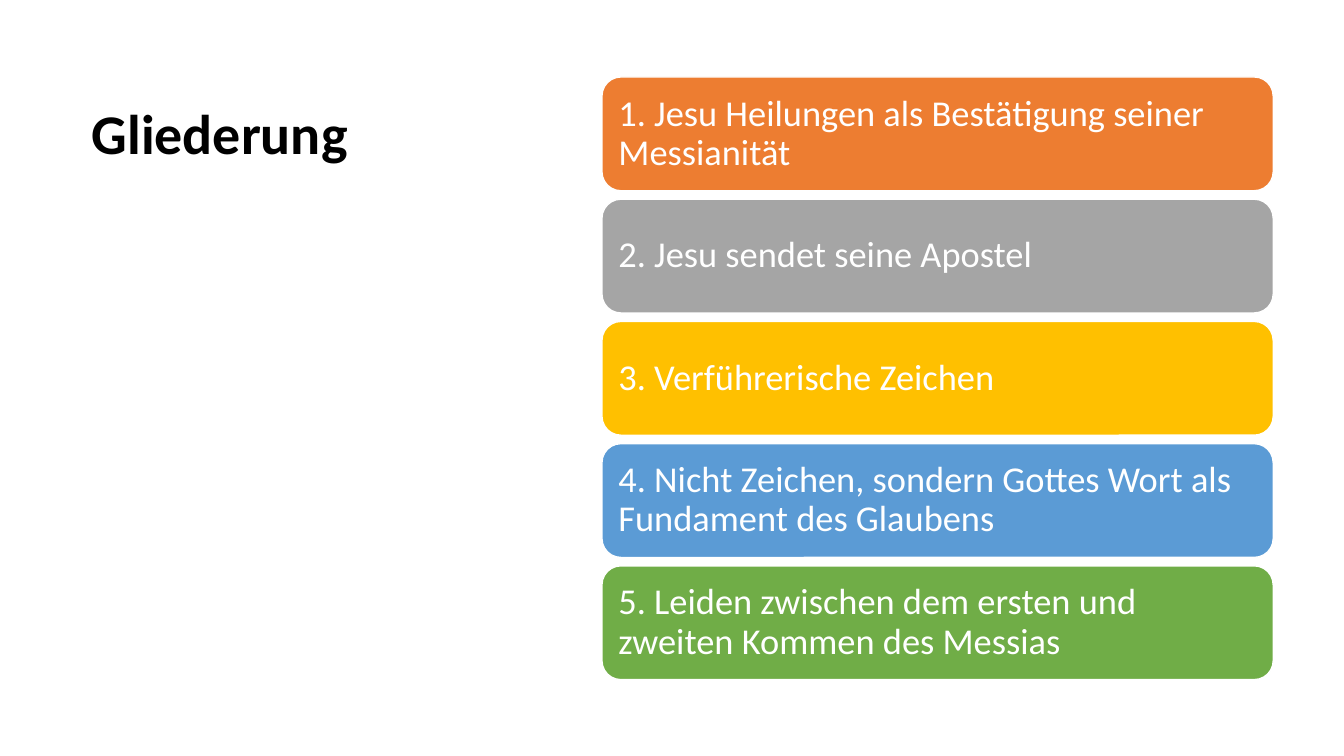
"""Build the outline slide: a title and five coloured section boxes."""
from dataclasses import dataclass

import pptx
import pptx.dml.color
import pptx.enum.shapes
import pptx.enum.text
import pptx.util

TITLE = "Gliederung"
SECTIONS = [
    ("1. Jesu Heilungen als Bestätigung seiner Messianität", "ED7D31"),
    ("2. Jesu sendet seine Apostel", "A5A5A5"),
    ("3. Verführerische Zeichen", "FFC000"),
    ("4. Nicht Zeichen, sondern Gottes Wort als Fundament des Glaubens", "5B9BD5"),
    ("5. Leiden zwischen dem ersten und zweiten Kommen des Messias", "70AD47"),
]


@dataclass(frozen=True)
class Theme:
    font: str = "Calibri"
    title_size: int = 40
    section_size: int = 26
    dark: str = "000000"
    light: str = "FFFFFF"


THEME = Theme()
Pt = pptx.util.Pt
SLIDE_SIZE = (960, 540)
TITLE_BOX = (58.3, 67, 270.7, 55.4)
LEFT, TOP, WIDTH, HEIGHT, GAP = 430, 55, 479.5, 81.3, 6


def rgb(value):
    return pptx.dml.color.RGBColor.from_string(value)


def write(s, text, size, color, bold=False, spacing=1.0, insets=(7.2, 3.6)):
    tf = s.text_frame
    tf.word_wrap = True
    tf.auto_size = pptx.enum.text.MSO_AUTO_SIZE.NONE
    tf.vertical_anchor = pptx.enum.text.MSO_ANCHOR.MIDDLE
    tf.margin_left = tf.margin_right = Pt(insets[0])
    tf.margin_top = tf.margin_bottom = Pt(insets[1])
    p = tf.paragraphs[0]
    p.alignment = pptx.enum.text.PP_ALIGN.LEFT
    p.line_spacing = spacing
    r = p.add_run()
    r.text = text
    r.font.name, r.font.size, r.font.bold = THEME.font, Pt(size), bold
    r.font.color.rgb = rgb(color)


def add_section(slide, index, text, fill):
    top = TOP + index * (HEIGHT + GAP)
    s = slide.shapes.add_shape(
        pptx.enum.shapes.MSO_SHAPE.ROUNDED_RECTANGLE,
        Pt(LEFT), Pt(top), Pt(WIDTH), Pt(HEIGHT))
    s.shadow.inherit = False
    s.fill.solid()
    s.fill.fore_color.rgb = rgb(fill)
    s.line.color.rgb = rgb(THEME.light)
    s.line.width = Pt(1)
    write(s, text, THEME.section_size, THEME.light, spacing=0.9, insets=(7.8, 7.8))


def main():
    prs = pptx.Presentation()
    prs.slide_width, prs.slide_height = map(Pt, SLIDE_SIZE)
    slide = prs.slides.add_slide(prs.slide_layouts.get_by_name("Title Only"))
    title = slide.shapes.title
    title.left, title.top, title.width, title.height = map(Pt, TITLE_BOX)
    write(title, TITLE, THEME.title_size, THEME.dark, bold=True)
    for index, (text, fill) in enumerate(SECTIONS):
        add_section(slide, index, text, fill)
    prs.save("out.pptx")


if __name__ == "__main__":
    main()
